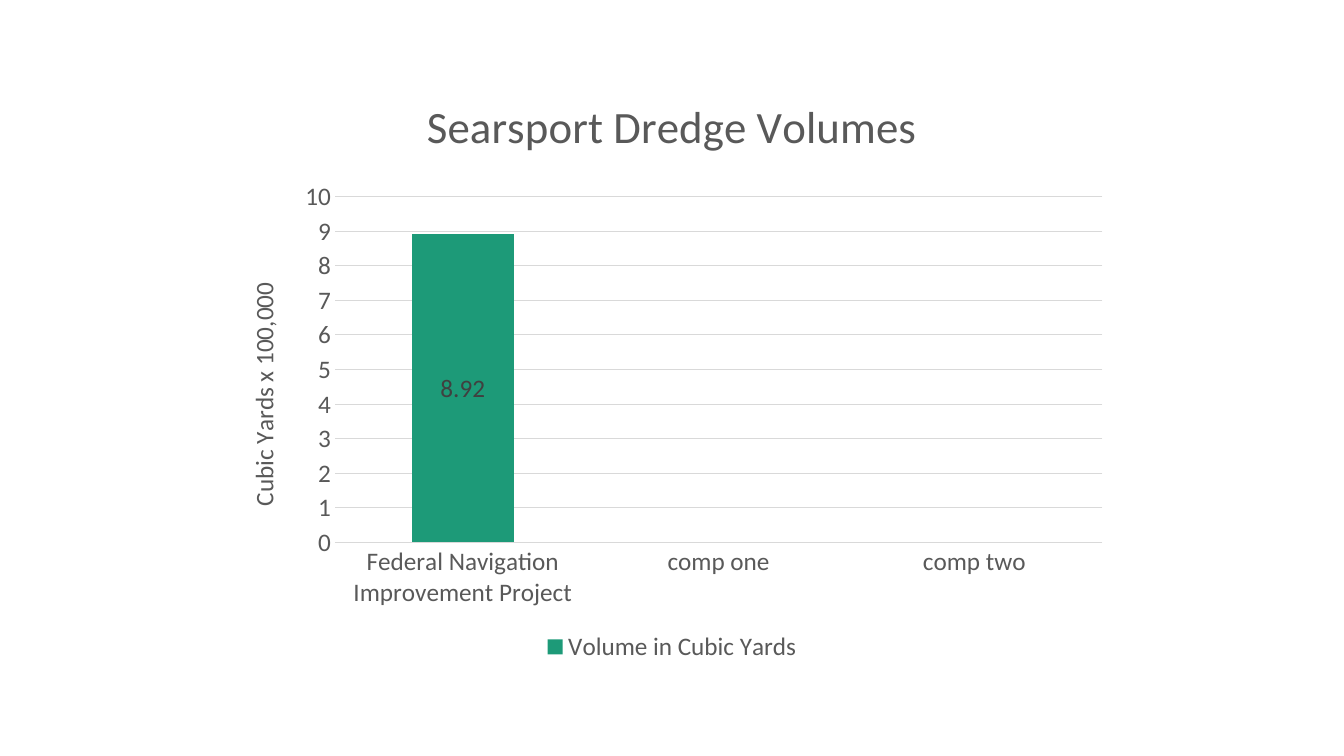
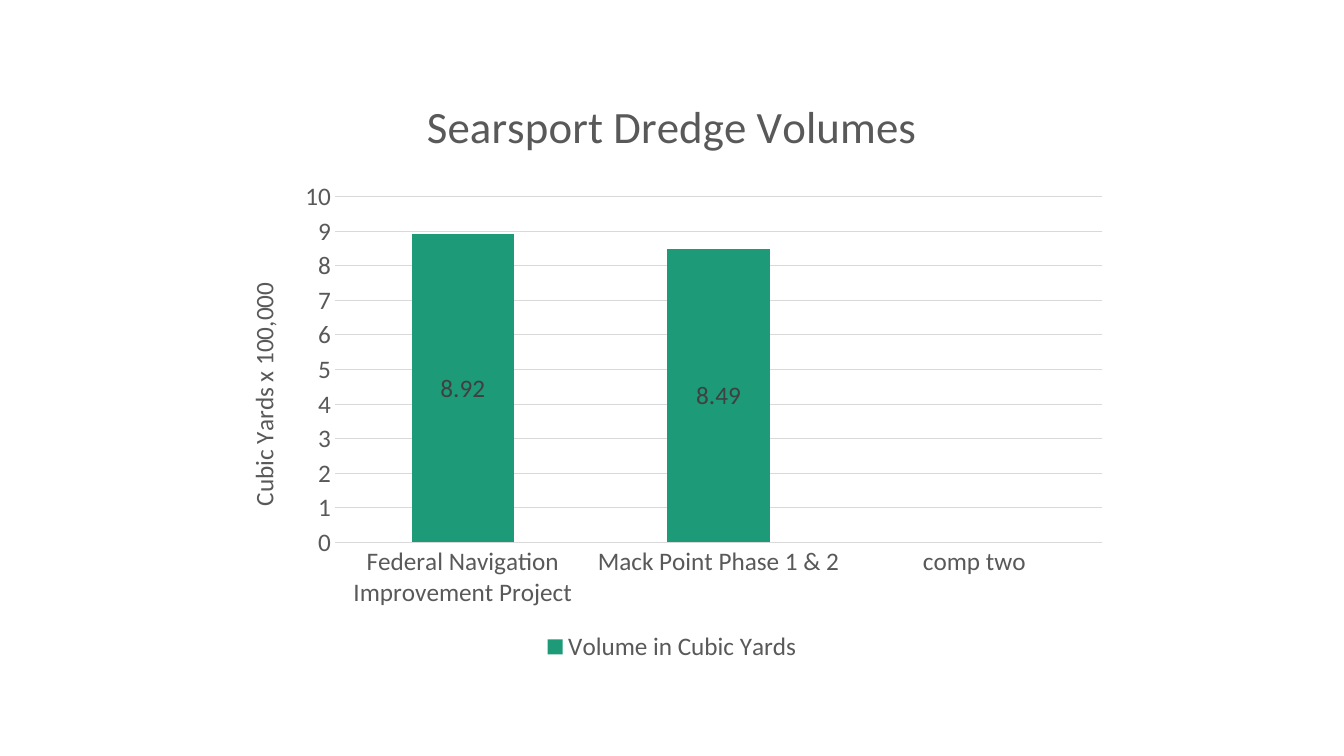
from pptx import Presentation
from pptx.chart.data import CategoryChartData
from pptx.dml.color import RGBColor
from pptx.enum.chart import XL_CHART_TYPE as ChartType
from pptx.enum.chart import XL_LABEL_POSITION as LabelPosition
from pptx.enum.chart import XL_LEGEND_POSITION as LegendPosition
from pptx.enum.chart import XL_TICK_MARK as TickMark
from pptx.util import Inches, Pt

PROJECT = "Federal Navigation Improvement Project"
PHASES = "Mack Point Phase 1 & 2"


def rgb(value):
    return RGBColor.from_string(value)


class Deck:
    FONT = "Calibri"
    TEXT, LABEL, BLACK = "595959", "404040", "000000"
    BAR, RULE = "1D9A78", "D9D9D9"
    TEXT_SIZE, TITLE_SIZE = 18, 32

    def __init__(self):
        self.prs = Presentation()
        self.prs.slide_width = Inches(13.33)
        self.prs.slide_height = Inches(7.5)
        self.slide = None

    def new_slide(self):
        self.slide = self.prs.slides.add_slide(self.prs.slide_layouts[6])

    def style_font(self, font, size=TEXT_SIZE, color=TEXT):
        font.name = self.FONT
        font.size = Pt(size)
        font.bold = False
        font.color.rgb = rgb(color)

    def rule(self, line):
        line.color.rgb = rgb(self.RULE)
        line.width = Pt(0.75)

    def heading(self, owner, text, size, default_size):
        """Title a chart or axis; default_size is the paragraph default, which sets the padding."""
        paragraph = owner.text_frame.paragraphs[0]
        self.style_font(paragraph.font, default_size)
        run = paragraph.add_run()
        run.text = text
        self.style_font(run.font, size)

    def axes(self, chart):
        for axis in (chart.category_axis, chart.value_axis):
            axis.major_tick_mark = axis.minor_tick_mark = TickMark.NONE
            self.style_font(axis.tick_labels.font)
        self.rule(chart.category_axis.format.line)

        volume_axis = chart.value_axis
        volume_axis.minimum_scale, volume_axis.maximum_scale = 0, 10
        volume_axis.format.line.fill.background()
        volume_axis.has_major_gridlines = True
        self.rule(volume_axis.major_gridlines.format.line)
        self.heading(volume_axis.axis_title, "Cubic Yards x 100,000",
                     self.TEXT_SIZE, self.TEXT_SIZE)

    def legend(self, chart):
        chart.has_legend = True
        chart.legend.position = LegendPosition.BOTTOM
        chart.legend.include_in_layout = False
        self.style_font(chart.legend.font)

    def bars(self, plot):
        plot.gap_width, plot.overlap = 150, 100
        plot.vary_by_categories = False
        fill = plot.series[0].format.fill
        fill.solid()
        fill.fore_color.rgb = rgb(self.BAR)
        labels = plot.series[0].data_labels
        labels.show_value = True
        labels.position = LabelPosition.CENTER
        self.style_font(labels.font, color=self.LABEL)

    def volume_chart(self, volumes, base_size, title_default):
        data = CategoryChartData()
        data.categories = list(volumes)
        data.add_series("Volume in Cubic Yards", list(volumes.values()))
        chart = self.slide.shapes.add_chart(
            ChartType.COLUMN_STACKED, Inches(2.22), Inches(0.69),
            Inches(8.89), Inches(5.93), data).chart
        self.style_font(chart.font, base_size, self.BLACK)
        chart.has_title = True
        chart.chart_title.include_in_layout = False
        self.heading(chart.chart_title, "Searsport Dredge Volumes",
                     self.TITLE_SIZE, title_default)
        self.axes(chart)
        self.legend(chart)
        self.bars(chart.plots[0])


def main():
    deck = Deck()

    deck.new_slide()
    deck.volume_chart({PROJECT: 8.92, "comp one": None, "comp two": None},
                      base_size=10, title_default=12)

    deck.new_slide()
    deck.volume_chart({PROJECT: 8.92, PHASES: 8.49, "comp two": None},
                      base_size=18, title_default=32)

    deck.prs.save("out.pptx")


if __name__ == "__main__":
    main()
